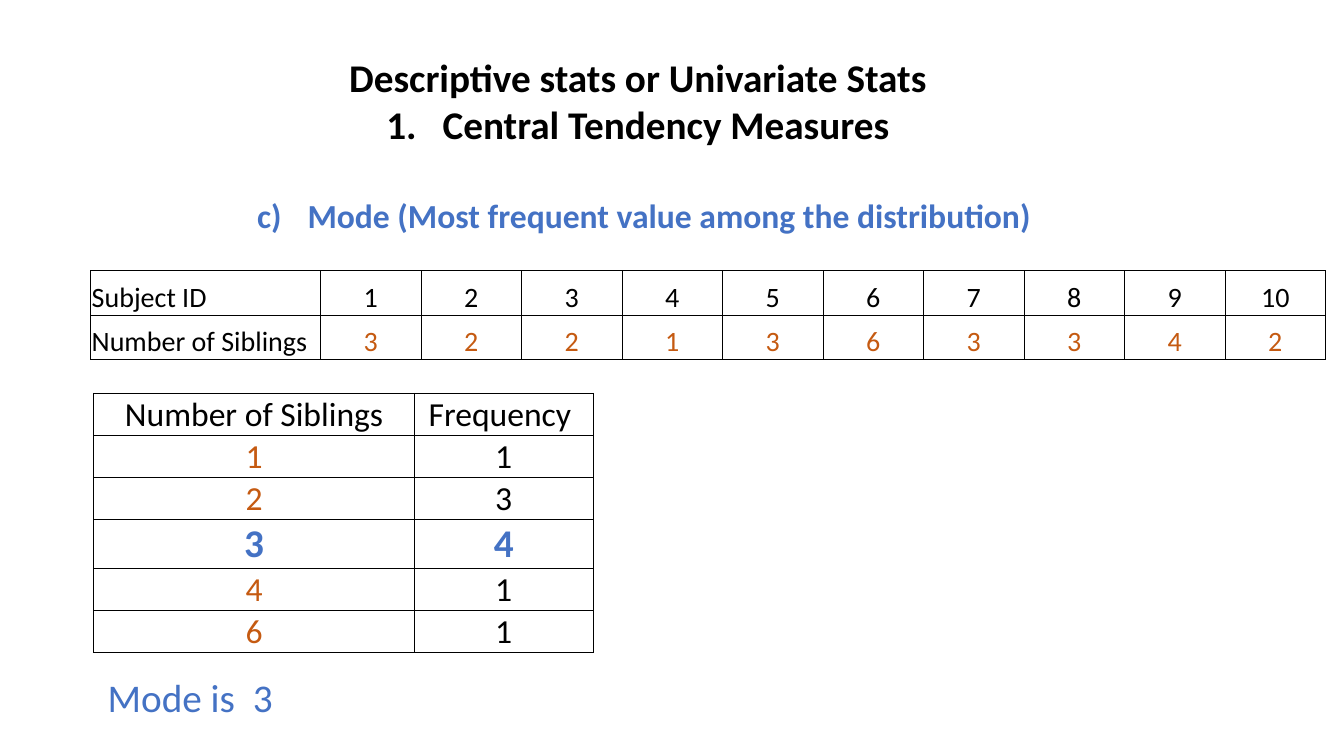
from collections import Counter

from lxml.etree import SubElement
from pptx import Presentation
from pptx.dml.color import RGBColor
from pptx.enum.text import MSO_ANCHOR as Anchor, MSO_AUTO_SIZE as AutoSize, PP_ALIGN as Align
from pptx.oxml.ns import qn
from pptx.util import Inches, Pt

WIDTH, HEIGHT = Inches(13.33), Inches(7.5)
BLACK = RGBColor(0x00, 0x00, 0x00)
BLUE = RGBColor(0x44, 0x72, 0xC4)
ORANGE = RGBColor(0xC5, 0x5A, 0x11)

SIBLINGS = [3, 2, 2, 1, 3, 6, 3, 3, 4, 2]
CELL_INSETS = {"margin_left": Inches(0.01), "margin_right": Inches(0.01),
               "margin_top": Inches(0.01), "margin_bottom": 0}


def across(percent):
    return round(WIDTH * percent / 100)


def down(percent):
    return round(HEIGHT * percent / 100)


def set_all(target, values):
    for name, value in values.items():
        setattr(target, name, value)


def write(para, text, size, color=BLACK, bold=False, align=Align.LEFT):
    para.alignment = align
    span = para.add_run()
    span.text = text
    set_all(span.font, {"name": "Calibri", "size": Pt(size), "bold": bold})
    span.font.color.rgb = color


def number(para, scheme, start, left, hanging):
    """Number a paragraph automatically, with a hanging indent in inches."""
    props = para._p.get_or_add_pPr()
    props.set("marL", str(Inches(left)))
    props.set("indent", str(-Inches(hanging)))
    SubElement(props, qn("a:buAutoNum"), type=scheme, startAt=str(start))


def border(cell):
    props = cell._tc.get_or_add_tcPr()
    for position, side in enumerate(("lnL", "lnR", "lnT", "lnB")):
        line = props.makeelement(qn(f"a:{side}"), {"w": str(Pt(0.5))})
        fill = SubElement(line, qn("a:solidFill"))
        SubElement(fill, qn("a:srgbClr"), val=str(BLACK))
        props.insert(position, line)


def add_grid(page, left, top, widths, heights, rows, style):
    """Add a ruled table; style(row, column) gives the text format of a cell."""
    frame = page.shapes.add_table(len(rows), len(widths), across(left), down(top),
                                  across(sum(widths)), down(sum(heights)))
    table = frame.table
    set_all(table, {"first_row": False, "horz_banding": False})
    for column, width in zip(table.columns, widths):
        column.width = across(width)
    for row, height in zip(table.rows, heights):
        row.height = down(height)
    for r, values in enumerate(rows):
        for c, value in enumerate(values):
            cell = table.cell(r, c)
            set_all(cell, {"vertical_anchor": Anchor.BOTTOM, **CELL_INSETS})
            cell.fill.background()
            border(cell)
            write(cell.text_frame.paragraphs[0], str(value), **style(r, c))


def add_heading(page):
    title = page.shapes.title
    set_all(title, {"left": across(14.63), "top": down(6.4),
                    "width": across(65.64), "height": down(25.6)})
    frame = title.text_frame
    set_all(frame, {"word_wrap": True, "auto_size": AutoSize.NONE,
                    "vertical_anchor": Anchor.TOP})
    write(frame.paragraphs[0], "Descriptive stats or Univariate Stats", 28,
          bold=True, align=Align.CENTER)
    topic = frame.add_paragraph()
    write(topic, "Central Tendency Measures", 28, bold=True, align=Align.CENTER)
    number(topic, "arabicPeriod", 1, 0.56, 0.56)
    measure = frame.add_paragraph()
    measure.space_before = Pt(34)
    write(measure, "Mode (Most frequent value among the distribution)", 24, BLUE, bold=True)
    number(measure, "alphaLcParenR", 3, 1, 0.5)


def add_subjects(page):
    def style(row, column):
        return {"size": 20, "color": ORANGE if row and column else BLACK,
                "align": Align.CENTER if column else Align.LEFT}

    rows = [["Subject ID", *range(1, len(SIBLINGS) + 1)], ["Number of Siblings", *SIBLINGS]]
    add_grid(page, 6.75, 35.8, [17.1] + [7.48] * len(SIBLINGS), [5.87] * 2, rows, style)


def add_frequencies(page):
    counts = sorted(Counter(SIBLINGS).items())
    mode = max(counts, key=lambda pair: pair[1])
    rows = [("Number of Siblings", "Frequency "), *counts]
    mode_row = rows.index(mode)

    def style(row, column):
        if row == mode_row:
            return {"size": 28, "color": BLUE, "bold": True, "align": Align.CENTER}
        color = ORANGE if row and not column else BLACK
        return {"size": 24, "color": color, "align": Align.CENTER}

    heights = [6.4 if row == mode_row else 5.47 for row in range(len(rows))]
    add_grid(page, 6.98, 52, [23.86, 13.28], heights, rows, style)


def add_answer(page):
    box = page.shapes.add_textbox(across(7.28), down(88.4), across(18.23), down(7.6))
    box.text_frame.word_wrap = True
    write(box.text_frame.paragraphs[0], "Mode is  3", 28, BLUE)


def main():
    deck = Presentation()
    set_all(deck, {"slide_width": WIDTH, "slide_height": HEIGHT})
    page = deck.slides.add_slide(deck.slide_layouts.get_by_name("Title Only"))
    add_heading(page)
    add_subjects(page)
    add_frequencies(page)
    add_answer(page)
    deck.save("out.pptx")


if __name__ == "__main__":
    main()
